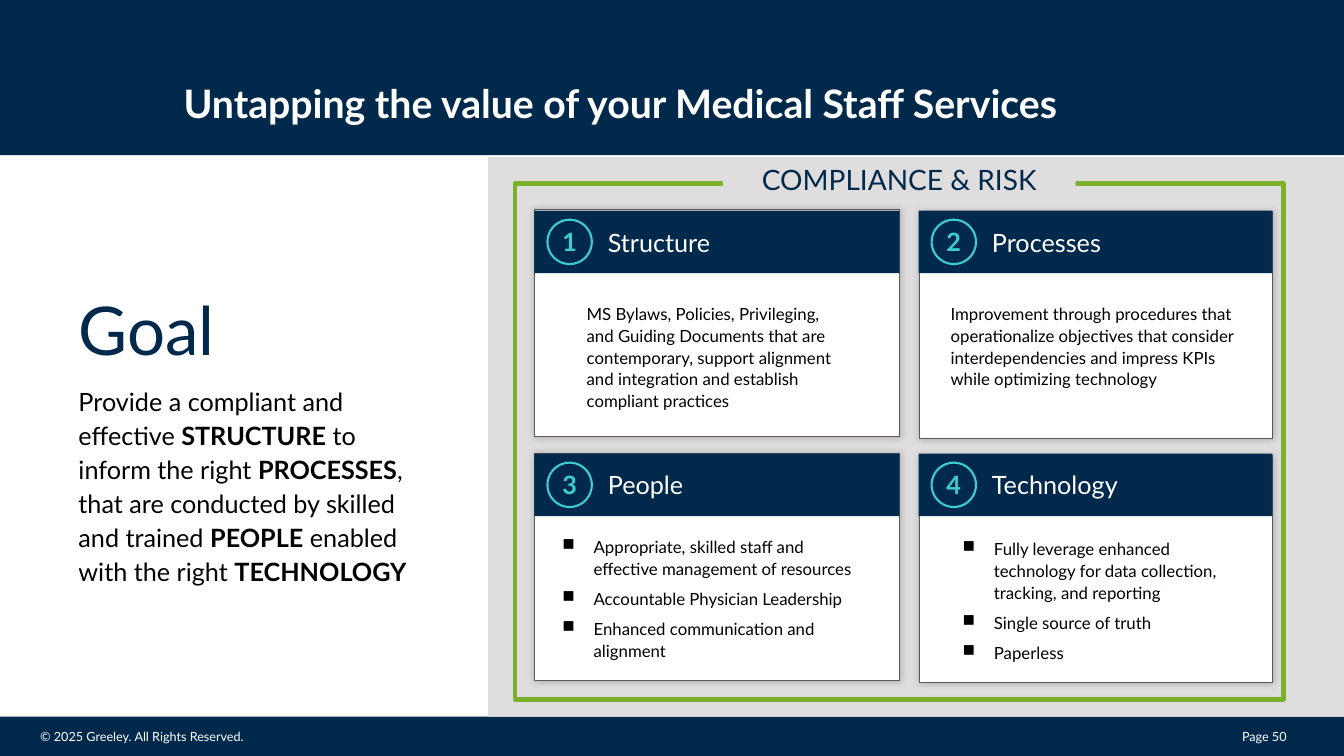
from dataclasses import dataclass

import lxml.etree
import pptx
import pptx.dml.color
import pptx.enum.shapes
import pptx.enum.text
import pptx.oxml.ns
import pptx.util

Inches = pptx.util.Inches
Shape = pptx.enum.shapes.MSO_SHAPE
Align = pptx.enum.text.PP_ALIGN
Anchor = pptx.enum.text.MSO_ANCHOR
AutoSize = pptx.enum.text.MSO_AUTO_SIZE
qn = pptx.oxml.ns.qn


@dataclass(frozen=True)
class Theme:
    font: str = "Lato"
    navy: str = "00294C"
    panel: str = "DFDDDD"
    white: str = "FFFFFF"
    black: str = "000000"
    border: str = "5B5857"
    teal: str = "3ECCCC"
    green: str = "7CAF2A"
    footer: int = 9
    detail: int = 12
    body: int = 18
    heading: int = 20
    title: int = 28
    goal: int = 48


THEME = Theme()
CARDS = [
    ("Structure", (5.72, 2.95, 2.69, 1.17), False, [
        "MS Bylaws, Policies, Privileging, and Guiding Documents that are contemporary, "
        "support alignment and integration and establish compliant practices"]),
    ("Processes", (9.33, 2.95, 3.06, 0.96), False, [
        "Improvement through procedures that operationalize objectives that consider "
        "interdependencies and impress KPIs while optimizing technology"]),
    ("People", (5.48, 5.26, 3.17, 1.34), True, [
        "Appropriate, skilled staff and effective management of resources",
        "Accountable Physician Leadership",
        "Enhanced communication and alignment"]),
    ("Technology", (9.45, 5.28, 2.84, 1.34), True, [
        "Fully leverage enhanced technology for data collection, tracking, and reporting",
        "Single source of truth",
        "Paperless"]),
]
COLUMNS = [(5.3, 5.3, 3.62, 3.62), (9.12, 9.11, 3.5, 3.51)]
HEADER_TOPS = [2.09, 4.5]
CARD_TOPS = [[2.08, 2.1], [4.5, 4.52]]


def rgb(value):
    return pptx.dml.color.RGBColor.from_string(value)


def add_bullet(paragraph):
    properties = paragraph._p.get_or_add_pPr()
    properties.set("marL", str(Inches(0.31)))
    properties.set("indent", str(Inches(-0.31)))
    lxml.etree.SubElement(properties, qn("a:buChar"), char="■")


def write(shape, paragraphs, size, color, bold=False, align=Align.LEFT,
          anchor=Anchor.TOP, spacing=None, before=None, after=None,
          indent=0, bullets=False, inset=None, grow=False):
    frame = shape.text_frame
    frame.word_wrap = True
    frame.auto_size = AutoSize.SHAPE_TO_FIT_TEXT if grow else AutoSize.NONE
    frame.vertical_anchor = anchor
    if inset is not None:
        frame.margin_left = frame.margin_right = Inches(inset)
        frame.margin_top = frame.margin_bottom = Inches(inset)
    for index, text in enumerate(paragraphs):
        paragraph = frame.add_paragraph() if index else frame.paragraphs[0]
        if bullets:
            add_bullet(paragraph)
        if indent:
            paragraph._p.get_or_add_pPr().set("marL", str(Inches(indent)))
        paragraph.alignment = align
        if spacing:
            paragraph.line_spacing = spacing
        if before and index:
            paragraph.space_before = pptx.util.Pt(before)
        if after:
            paragraph.space_after = pptx.util.Pt(after)
        for part, words in enumerate(text.split("**")):
            if words:
                run = paragraph.add_run()
                run.text = words
                run.font.name = THEME.font
                run.font.size = pptx.util.Pt(size)
                run.font.bold = bold or part % 2 == 1
                run.font.color.rgb = rgb(color)


def add_block(slide, place, fill=None, line=None, width=1, kind=Shape.RECTANGLE):
    block = slide.shapes.add_shape(kind, *map(Inches, place))
    block.shadow.inherit = False
    if fill:
        block.fill.solid()
        block.fill.fore_color.rgb = rgb(fill)
    else:
        block.fill.background()
    if line:
        block.line.color.rgb = rgb(line)
        block.line.width = pptx.util.Pt(width)
    else:
        block.line.fill.background()
    return block


def add_text(slide, place, paragraphs, size, color, **style):
    box = slide.shapes.add_textbox(*map(Inches, place))
    write(box, paragraphs, size, color, **style)


def add_glow(block):
    effects = block._element.spPr.find(qn("a:effectLst"))
    shadow = lxml.etree.SubElement(
        effects, qn("a:outerShdw"), blurRad=str(pptx.util.Pt(5)), dist="0", dir="0")
    tint = lxml.etree.SubElement(shadow, qn("a:srgbClr"), val=THEME.black)
    lxml.etree.SubElement(tint, qn("a:alpha"), val="20000")


def add_card(slide, index, heading, detail_place, bullets, details):
    row, column = divmod(index, 2)
    card_left, header_left, card_width, header_width = COLUMNS[column]
    header_top = HEADER_TOPS[row]
    card = add_block(slide, (card_left, CARD_TOPS[row][column], card_width, 2.25),
                     THEME.white, THEME.border)
    add_glow(card)
    header = add_block(slide, (header_left, header_top, header_width, 0.62), THEME.navy)
    write(header, [heading], THEME.body, THEME.white, anchor=Anchor.MIDDLE, indent=0.63)
    badge = add_block(slide, (header_left + 0.13, header_top + 0.09, 0.44, 0.44),
                      line=THEME.teal, width=1.5, kind=Shape.OVAL)
    write(badge, [str(index + 1)], THEME.body, THEME.teal, bold=True,
          align=Align.CENTER, anchor=Anchor.MIDDLE, inset=0)
    add_text(slide, detail_place, details, THEME.detail, THEME.black,
             spacing=1.08, after=6, bullets=bullets, grow=True)


def add_title(slide, text):
    title = slide.shapes.title
    title.left, title.top = Inches(1.82), Inches(0)
    title.width, title.height = Inches(11.21), Inches(1.25)
    write(title, [text], THEME.title, THEME.white, bold=True,
          anchor=Anchor.BOTTOM, spacing=1.08, inset=0)
    slide.shapes._spTree.append(title._element)


def add_footer(slide):
    add_block(slide, (0, 7.11, 13.33, 0.39), THEME.navy)
    for place, text in [((0.3, 7.18, 4.48, 0.26), "© 2025 Greeley. All Rights Reserved."),
                        ((12.22, 7.18, 1.05, 0.26), "Page 50")]:
        add_text(slide, place, [text], THEME.footer, THEME.white, grow=True)


def add_goal(slide):
    add_text(slide, (0.68, 2.82, 3.85, 0.82), ["Goal"], THEME.goal, THEME.navy,
             anchor=Anchor.MIDDLE, spacing=1.08)
    add_text(slide, (0.68, 3.75, 3.65, 2.11),
             ["Provide a compliant and effective **STRUCTURE** to inform the right "
              "**PROCESSES**, that are conducted by skilled and trained **PEOPLE** "
              "enabled with the right **TECHNOLOGY**"],
             THEME.body, THEME.black, spacing=1.12, after=6, grow=True)


def main():
    deck = pptx.Presentation()
    deck.slide_width, deck.slide_height = Inches(13.33), Inches(7.5)
    slide = deck.slides.add_slide(deck.slide_layouts[5])
    add_footer(slide)
    add_block(slide, (0, 0, 13.33, 1.54), THEME.navy)
    add_title(slide, "Untapping the value of your Medical Staff Services")
    add_block(slide, (4.84, 1.56, 8.49, 5.55), THEME.panel)
    add_block(slide, (5.11, 1.82, 7.62, 5.12), line=THEME.green, width=3)
    risk_label = add_block(slide, (7.17, 1.56, 3.5, 0.44), THEME.panel)
    write(risk_label, ["COMPLIANCE & RISK"], THEME.heading, THEME.navy,
          align=Align.CENTER, grow=True)
    for index, card in enumerate(CARDS):
        add_card(slide, index, *card)
    add_goal(slide)
    deck.save("out.pptx")


if __name__ == "__main__":
    main()
